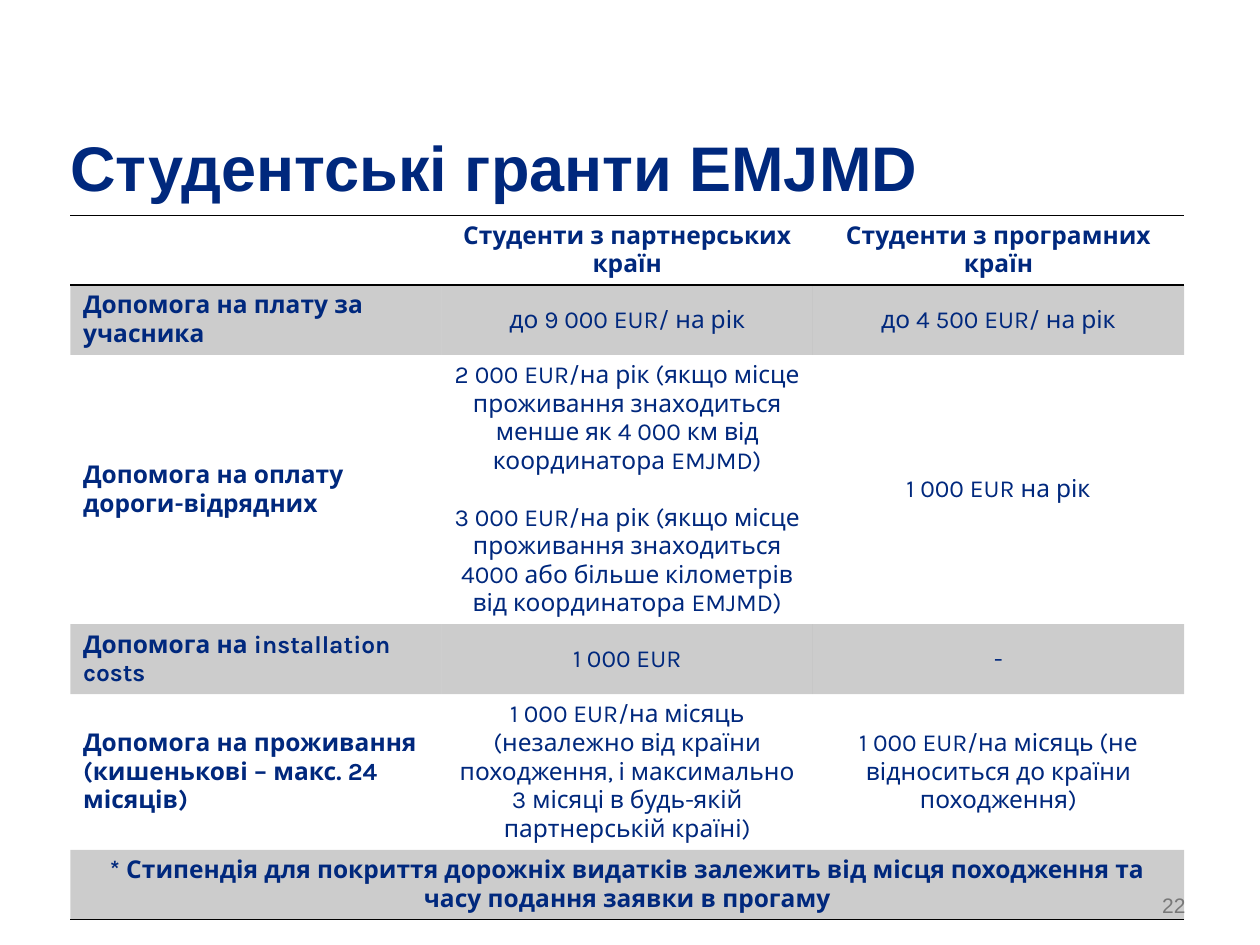
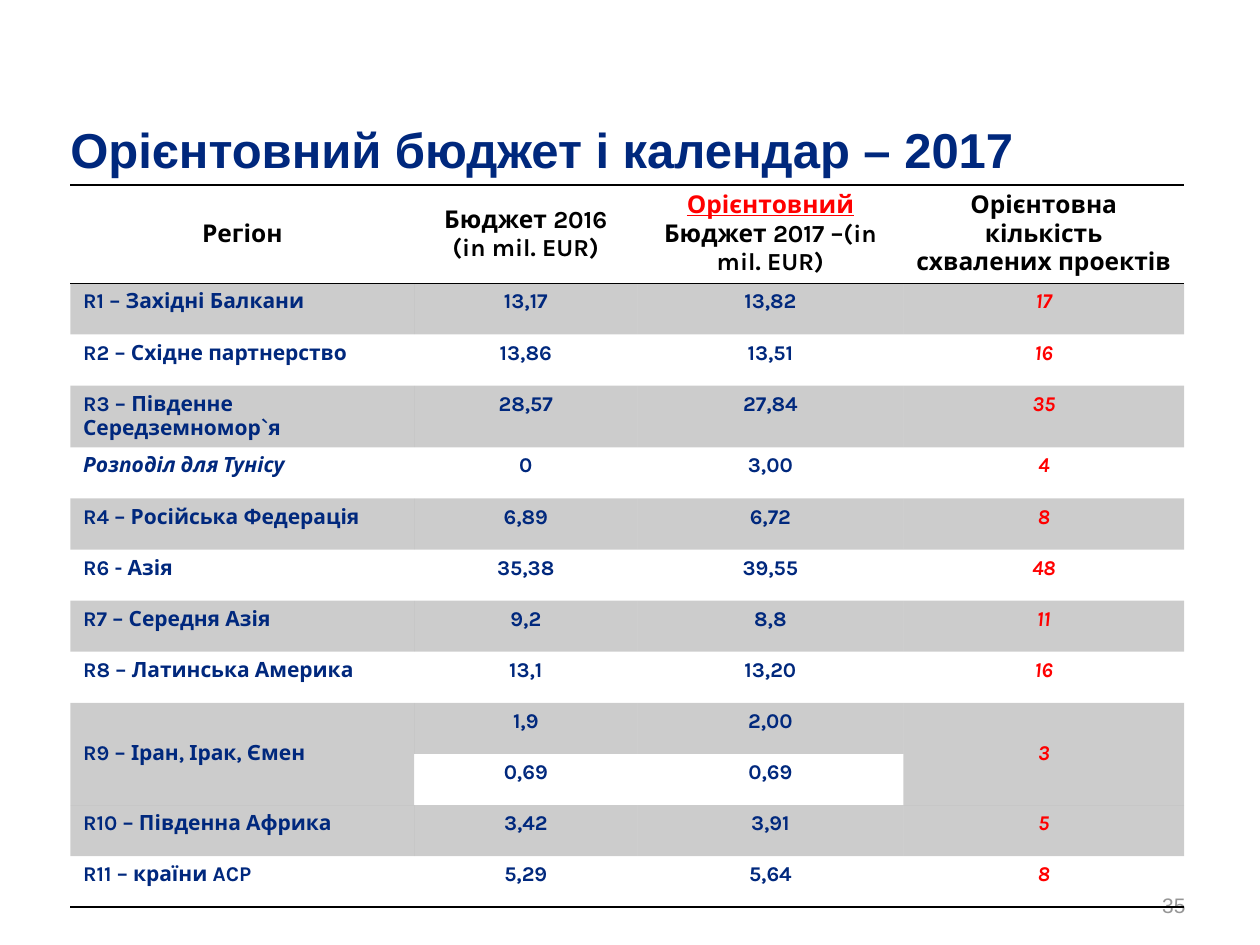
"""Build two slides with tables of student grants and regional budgets."""
import lxml.etree
import pptx
import pptx.dml.color
import pptx.enum.text
import pptx.oxml.ns
import pptx.util

Cm, Pt = pptx.util.Cm, pptx.util.Pt
ALIGN = pptx.enum.text.PP_ALIGN
ANCHOR = pptx.enum.text.MSO_ANCHOR
qn = pptx.oxml.ns.qn

HUES = {"navy": "00287D", "black": "000000", "red": "FF0000", "gray": "969696"}
PLAIN = "{2D5ABB26-0587-4C30-8999-92F81FD0307C}"
LEFT, WIDTH = 1.42, 22.45

TITLE = {"name": "Arial", "bold": True, "hue": "navy"}
PAGE = {"name": "Arial", "size": Pt(12), "hue": "gray"}
BOLD = {"name": "Karla", "size": Pt(14), "bold": True, "hue": "navy"}
LIGHT = BOLD | {"bold": False}
HEAD = BOLD | {"hue": "black"}
SMALL = BOLD | {"size": Pt(12)}
SLANT = SMALL | {"italic": True}
COUNT = SLANT | {"hue": "red"}
MARK = HEAD | {"hue": "red", "underline": True}

GRANTS = [
    ["", "Студенти з партнерських країн", "Студенти з програмних країн"],
    ["Допомога на плату за учасника", "до 9 000 EUR/ на рік", "до 4 500 EUR/ на рік"],
    ["Допомога на оплату дороги-відрядних",
     "2 000 EUR/на рік (якщо місце проживання знаходиться менше як 4 000 км від "
     "координатора EMJMD)\n3 000 EUR/на рік (якщо місце проживання знаходиться 4000 "
     "або більше кілометрів від координатора EMJMD)",
     "1 000 EUR на рік"],
    ["Допомога на installation costs", "1 000 EUR", "-"],
    ["Допомога на проживання (кишенькові – макс. 24 місяців)",
     "1 000 EUR/на місяць (незалежно від країни походження, і максимально 3 місяці "
     "в будь-якій партнерській країні)",
     "1 000 EUR/на місяць (не відноситься до країни походження)"],
    ["* Стипендія для покриття дорожніх видатків залежить від місця походження та "
     "часу подання заявки в прогаму", "", ""],
]

FUNDS = [
    ["Регіон", "Бюджет 2016\n(in mil. EUR)", "", "Орієнтовна кількість схвалених проектів"],
    ["R1 – Західні Балкани", "13,17", "13,82", "17"],
    ["R2 – Східне партнерство", "13,86", "13,51", "16"],
    ["R3 – Південне Середземномор`я", "28,57", "27,84", "35"],
    ["Розподіл для Тунісу", "0", "3,00", "4"],
    ["R4 – Російська Федерація", "6,89", "6,72", "8"],
    ["R6 - Азія", "35,38", "39,55", "48"],
    ["R7 – Середня Азія", "9,2", "8,8", "11"],
    ["R8 – Латинська Америка", "13,1", "13,20", "16"],
    ["R9 – Іран, Ірак, Ємен", "1,9", "2,00", "3"],
    ["", "0,69", "0,69", ""],
    ["R10 – Південна Африка", "3,42", "3,91", "5"],
    ["R11 – країни ACP", "5,29", "5,64", "8"],
]


def paint(color, hue):
    """Set a colour by its name."""
    color.rgb = pptx.dml.color.RGBColor.from_string(HUES[hue])


def put(para, text, look):
    """Add a run with the given look."""
    run = para.add_run()
    run.text = text
    for key, val in look.items():
        if key == "hue":
            paint(run.font.color, val)
        else:
            setattr(run.font, key, val)


def write(frame, text, look, align, gap=0):
    """Write one paragraph for each line of text."""
    for num, line in enumerate(text.split("\n")):
        para = frame.add_paragraph() if num else frame.paragraphs[0]
        para.alignment = align
        if num:
            para.space_before = Pt(gap)
        put(para, line, look)


def shade(cell, band):
    """Fill a band cell with see-through black, or clear the cell."""
    if not band:
        cell.fill.background()
        return
    cell.fill.solid()
    paint(cell.fill.fore_color, "black")
    for color in cell._tc.tcPr.iter(qn("a:srgbClr")):
        lxml.etree.SubElement(color, qn("a:alpha"), val="20000")


def rule(cell, sides):
    """Draw black lines on the given sides of a cell."""
    props = cell._tc.get_or_add_tcPr()
    for spot, side in enumerate(sides):
        line = lxml.etree.Element(qn(f"a:ln{side}"), w=str(Pt(1)))
        fill = lxml.etree.SubElement(line, qn("a:solidFill"))
        lxml.etree.SubElement(fill, qn("a:srgbClr"), val=HUES["black"])
        props.insert(spot, line)


def start(deck, text, top, size, page):
    """Add a slide with its title and page number."""
    slide = deck.slides.add_slide(deck.slide_layouts[5])
    title = slide.shapes.title
    spot = {"left": Cm(LEFT), "top": Cm(top), "width": Cm(WIDTH), "height": Cm(1.8)}
    for key, val in spot.items():
        setattr(title, key, val)
    box = slide.shapes.add_textbox(Cm(19.05), Cm(17.35), Cm(5.1), Cm(1.27))
    for frame in (title.text_frame, box.text_frame):
        frame.word_wrap = True
        frame.auto_size = pptx.enum.text.MSO_AUTO_SIZE.NONE
        frame.vertical_anchor = ANCHOR.BOTTOM
    title.text_frame.margin_left = title.text_frame.margin_right = 0
    write(title.text_frame, text, TITLE | {"size": Pt(size)}, ALIGN.LEFT)
    write(box.text_frame, page, PAGE, ALIGN.RIGHT)
    return slide


def grid(slide, data, top, cols, rows, spans, style, gap=0):
    """Add a banded table; style gives the look, align and anchor of a cell."""
    shape = slide.shapes.add_table(len(rows), len(cols), Cm(LEFT), Cm(top),
                                   Cm(sum(cols)), Cm(sum(rows)))
    table = shape.table
    table.first_row = table.horz_banding = False
    for mark in shape.element.iter(qn("a:tableStyleId")):
        mark.text = PLAIN
    for col, width in zip(table.columns, cols):
        col.width = Cm(width)
    for row, height in zip(table.rows, rows):
        row.height = Cm(height)
    for first, last in spans:
        table.cell(*first).merge(table.cell(*last))
    for r, line in enumerate(data):
        for c, text in enumerate(line):
            cell = table.cell(r, c)
            look, align, cell.vertical_anchor = style(r, c)
            shade(cell, r % 2)
            rule(cell, "TB" if r == 0 else "B" if r == len(data) - 1 else "")
            if text:
                write(cell.text_frame, text, look, align, gap)
    return table


def grant(r, c):
    """Style the grants table."""
    ends = r in (0, len(GRANTS) - 1)
    return (BOLD if ends or c == 0 else LIGHT,
            ALIGN.CENTER if ends or c else ALIGN.LEFT,
            ANCHOR.TOP if ends else ANCHOR.MIDDLE)


def fund(r, c):
    """Style the budget table."""
    if r == 0:
        return HEAD, ALIGN.CENTER, ANCHOR.MIDDLE
    look = COUNT if c == 3 else SLANT if (r, c) == (4, 0) else SMALL
    mid = r == 9 and c in (0, 3)
    return (look, ALIGN.CENTER if c else ALIGN.LEFT,
            ANCHOR.MIDDLE if mid else ANCHOR.TOP)


def main():
    """Build and save the deck."""
    deck = pptx.Presentation()
    deck.slide_width, deck.slide_height = Cm(25.4), Cm(19.05)

    slide = start(deck, "Студентські гранти EMJMD", 2.44, 36, "22")
    grid(slide, GRANTS, 4.34, [WIDTH / 3] * 3, [1.4, 1.4, 5.43, 1.4, 3.14, 1.4],
         [((5, 0), (5, 2))], grant, 16)

    slide = start(deck, "Орієнтовний бюджет і календар – 2017", 1.93, 28, "35")
    rows = [1.97, 1.03, 1.03, 1.24] + [1.03] * 9
    table = grid(slide, FUNDS, 3.73, [6.93, 4.5, 5.36, 5.66], rows,
                 [((9, 0), (10, 0)), ((9, 3), (10, 3))], fund)
    para = table.cell(0, 2).text_frame.paragraphs[0]
    para.alignment = ALIGN.CENTER
    put(para, "Орієнтовний", MARK)
    put(para, " Бюджет 2017 –(in mil. EUR)", HEAD)

    deck.save("out.pptx")


if __name__ == "__main__":
    main()
